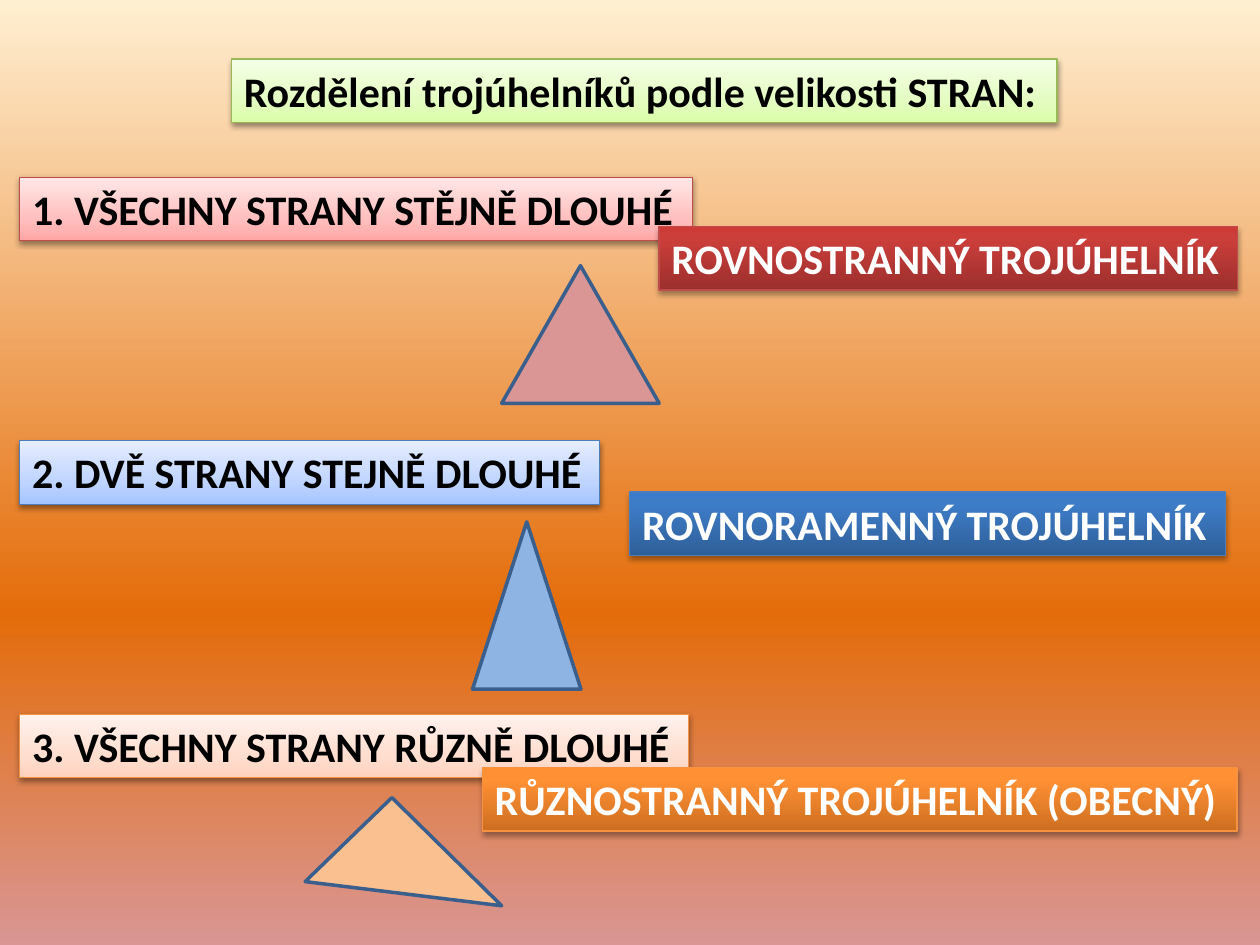
"""Build a slide that sorts triangles by the lengths of their sides."""
from dataclasses import dataclass

from lxml import etree
from pptx import Presentation
from pptx.dml.color import RGBColor
from pptx.enum.shapes import MSO_SHAPE
from pptx.enum.text import MSO_ANCHOR, MSO_AUTO_SIZE, PP_ALIGN
from pptx.oxml.ns import qn
from pptx.util import Pt

RECT = MSO_SHAPE.RECTANGLE
TRIANGLE = MSO_SHAPE.ISOSCELES_TRIANGLE
LEFT = PP_ALIGN.LEFT
TOP = MSO_ANCHOR.TOP
FIT = MSO_AUTO_SIZE.SHAPE_TO_FIT_TEXT
UP, DOWN = 90, 270


@dataclass(frozen=True)
class Theme:
    """Colours, type and line sizes of the slide."""
    font: str = "Calibri"
    size: float = 24
    dark: str = "000000"
    light: str = "FFFFFF"
    outline: str = "3A5F8C"
    box_line: float = 0.75
    outline_width: float = 2
    background: tuple = ("FFEFD1", "E46C0A", "D99694")
    green: tuple = ("DAFDA7", "E4FCC2", "F5FFE7")
    pink: tuple = ("FFA6A5", "FFC0BF", "FFE7E7")
    red: tuple = ("9C2F2D", "CB3E3A", "CE3B37")
    pale_blue: tuple = ("A4C4FF", "BFD4FF", "E6EEFF")
    blue: tuple = ("2F5F99", "3D7CC7", "3A7CCB")
    peach: tuple = ("FFD2BD", "FFDED0", "FFF2ED")
    orange: tuple = ("CC6E20", "FF9034", "FF9136")
    green_line: str = "98B955"
    red_line: str = "BF4C48"
    blue_line: str = "4B7EBC"
    orange_line: str = "F69240"
    rose_fill: str = "D99694"
    sky_fill: str = "8EB4E3"
    sand_fill: str = "FAC090"


class Painter:
    """Draw the kinds of element on the current slide in one style."""

    def __init__(self, s, theme):
        self.s, self.theme = s, theme

    def gradient(self, owner, fill, colors, middle, angle):
        """Give a fill three stops, the second at middle percent."""
        fill.gradient()
        fill.gradient_angle = angle
        stops = next(owner.iter(qn("a:gsLst")))
        for stop in list(stops):
            stops.remove(stop)
        for color, pos in zip(colors, (0, middle, 100)):
            stop = etree.SubElement(stops, qn("a:gs"), pos=str(pos * 1000))
            etree.SubElement(stop, qn("a:srgbClr"), val=color)

    def background(self, colors):
        """Fill the slide from top to bottom."""
        self.gradient(self.s.element, self.s.background.fill, colors, 65, DOWN)

    def line(self, sp, color, width):
        """Set the outline of a shape."""
        sp.line.color.rgb = RGBColor.from_string(color)
        sp.line.width = Pt(width)

    def shadow(self, sp, alpha, dist):
        """Cast a soft black shadow downwards."""
        sp.shadow.inherit = False
        effects = sp.element.spPr.find(qn("a:effectLst"))
        outer = etree.SubElement(
            effects, qn("a:outerShdw"), blurRad=str(Pt(3.15)),
            dist=str(Pt(dist)), dir="5400000", rotWithShape="0")
        color = etree.SubElement(outer, qn("a:srgbClr"), val=self.theme.dark)
        etree.SubElement(color, qn("a:alpha"), val=str(alpha * 1000))

    def box(self, text, x, y, w, colors, line, strong=False):
        """Add a one-line label, pale or strong."""
        t = self.theme
        sp = self.s.shapes.add_shape(RECT, Pt(x), Pt(y), Pt(w), Pt(36.35))
        middle, alpha, dist = (80, 35, 1.8) if strong else (35, 38, 1.6)
        self.gradient(sp.element, sp.fill, colors, middle, UP)
        self.line(sp, line, t.box_line)
        self.shadow(sp, alpha, dist)
        tf = sp.text_frame
        tf.word_wrap, tf.auto_size, tf.vertical_anchor = False, FIT, TOP
        p = tf.paragraphs[0]
        p.text, p.alignment = text, LEFT
        p.font.name, p.font.size, p.font.bold = t.font, Pt(t.size), True
        p.font.color.rgb = RGBColor.from_string(t.light if strong else t.dark)

    def finish(self, sp, color):
        """Apply the flat figure style."""
        sp.shadow.inherit = False
        sp.fill.solid()
        sp.fill.fore_color.rgb = RGBColor.from_string(color)
        self.line(sp, self.theme.outline, self.theme.outline_width)

    def triangle(self, x, y, w, h, color):
        """Add a symmetric triangle."""
        sp = self.s.shapes.add_shape(TRIANGLE, Pt(x), Pt(y), Pt(w), Pt(h))
        self.finish(sp, color)

    def polygon(self, points, color):
        """Add a closed outline through the points."""
        start, *rest = [(Pt(x), Pt(y)) for x, y in points]
        builder = self.s.shapes.build_freeform(*start)
        builder.add_line_segments(rest, close=True)
        self.finish(builder.convert_to_shape(), color)


def main():
    """Compose and save the slide."""
    prs = Presentation()
    prs.slide_width, prs.slide_height = Pt(720), Pt(540)
    t = Theme()
    d = Painter(prs.slides.add_slide(prs.slide_layouts[6]), t)
    d.background(t.background)
    d.box("Rozdělení trojúhelníků podle velikosti STRAN:",
          132.3, 33.7, 471.8, t.green, t.green_line)
    rows = (
        ("1. VŠECHNY STRANY STĚJNĚ DLOUHÉ", 101.3, 384.4, t.pink,
         "ROVNOSTRANNÝ TROJÚHELNÍK", 376.6, 129.4, 330.6, t.red, t.red_line),
        ("2. DVĚ STRANY STEJNĚ DLOUHÉ", 251.9, 331.2, t.pale_blue,
         "ROVNORAMENNÝ TROJÚHELNÍK", 359.8, 281.2, 340.6, t.blue, t.blue_line),
        ("3. VŠECHNY STRANY RŮZNĚ DLOUHÉ", 408.2, 382.3, t.peach,
         "RŮZNOSTRANNÝ TROJÚHELNÍK (OBECNÝ)", 275.6, 438.6, 431.3, t.orange,
         t.orange_line),
    )
    for rule, y, w, pale, name, name_x, name_y, name_w, strong, line in rows:
        d.box(rule, 11.3, y, w, pale, line)
        d.box(name, name_x, name_y, name_w, strong, line, strong=True)
    d.triangle(286.7, 151.8, 90, 78.7, t.rose_fill)
    d.triangle(270, 298.2, 62, 95.6, t.sky_fill)
    d.polygon([(224, 455.8), (174.4, 503.8), (286.7, 517.6)], t.sand_fill)
    prs.save("out.pptx")


if __name__ == "__main__":
    main()
